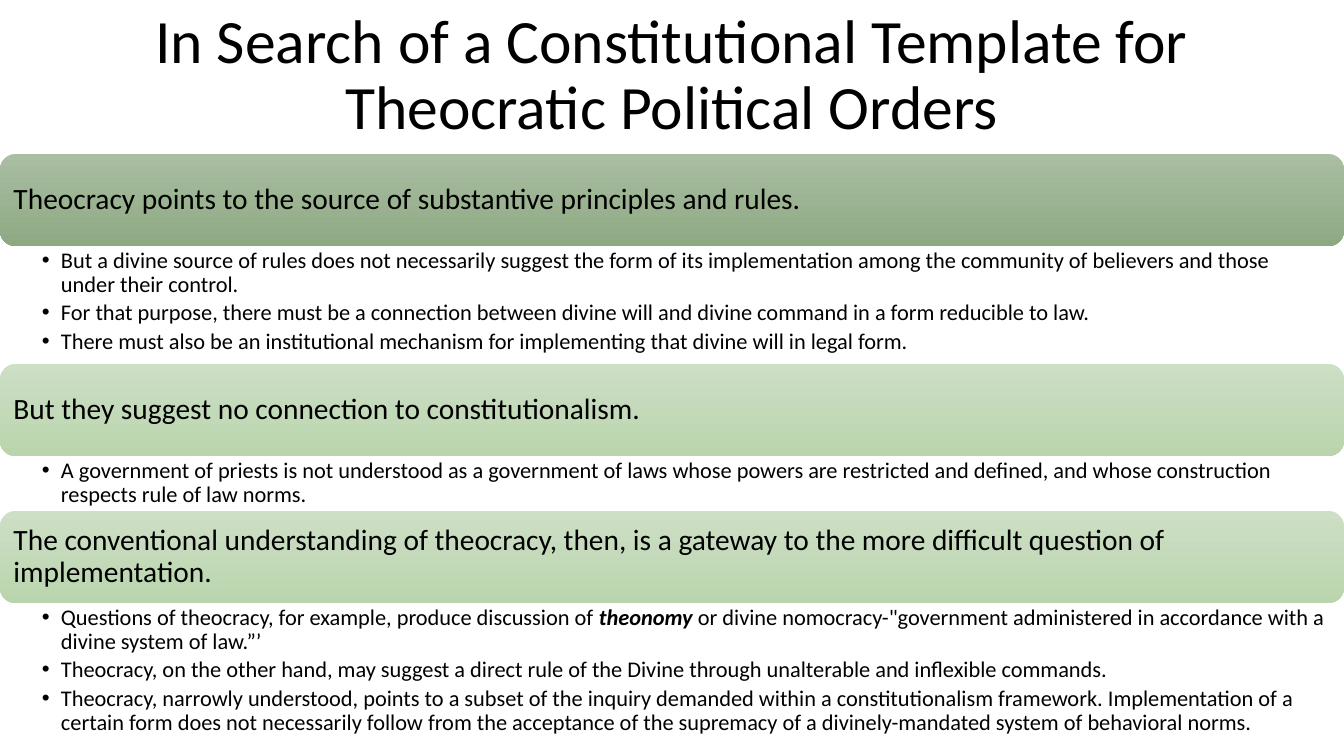
from lxml import etree
from pptx import Presentation
from pptx.dml.color import RGBColor
from pptx.enum.shapes import MSO_SHAPE
from pptx.enum.text import MSO_ANCHOR, MSO_AUTO_SIZE, PP_ALIGN
from pptx.oxml.ns import qn
from pptx.util import Pt

PX = 914400 / 100.8
WIDTH, HEIGHT = 1344, 756
FONT, INK = "Calibri", "000000"
ROUNDED = MSO_SHAPE.ROUNDED_RECTANGLE
TOP, MIDDLE = MSO_ANCHOR.TOP, MSO_ANCHOR.MIDDLE
LEFT, CENTER = PP_ALIGN.LEFT, PP_ALIGN.CENTER
NO_FIT = MSO_AUTO_SIZE.NONE
TITLE_ONLY = 5
BAR_TOP, BAR_HEIGHT = 154, 92
BULLET_INDENT = 19
DARK_GREEN = ("AABEA2", "8DA982")
PALE_GREEN = ("CDDFC5", "BAD5AE")

TITLE = "In Search of a Constitutional Template for Theocratic Political Orders"
# Each section: heading, bar gradient, height of the points, points as lists of runs.
# Every second run of a point is emphasised.
SECTIONS = [
    ("Theocracy points to the source of substantive principles and rules.", DARK_GREEN, 118, [
        ["But a divine source of rules does not necessarily suggest the form of its "
         "implementation among the community of believers and those under their control."],
        ["For that purpose, there must be a connection between divine will and divine "
         "command in a form reducible to law."],
        ["There must also be an institutional mechanism for implementing that divine "
         "will in legal form."],
    ]),
    ("But they suggest no connection to constitutionalism.", PALE_GREEN, 55, [
        ["A government of priests is not understood as a government of laws whose powers "
         "are restricted and defined, and whose construction respects rule of law norms."],
    ]),
    ("The conventional understanding of theocracy, then, is a gateway to the more "
     "difficult question of implementation.", PALE_GREEN, 141, [
        ["Questions of theocracy, for example, produce discussion of ", "theonomy",
         " or divine nomocracy-\"government administered in accordance with a divine "
         "system of law.”’"],
        ["Theocracy, on the other hand, may suggest a direct rule of the Divine through "
         "unalterable and inflexible commands."],
        ["Theocracy, narrowly understood, points to a subset of the inquiry demanded within "
         "a constitutionalism framework. Implementation of a certain form does not "
         "necessarily follow from the acceptance of the supremacy of a divinely-mandated "
         "system of behavioral norms."],
    ]),
]


def px(length):
    return round(length * PX)


def color(hex_code):
    return RGBColor.from_string(hex_code)


def set_all(target, values):
    for name, value in values.items():
        setattr(target, name, value)


def format_frame(frame, anchor, left, top, right, bottom):
    set_all(frame, {
        "word_wrap": True, "auto_size": NO_FIT, "vertical_anchor": anchor,
        "margin_left": px(left), "margin_top": px(top),
        "margin_right": px(right), "margin_bottom": px(bottom),
    })


def write(paragraph, runs, size, align=LEFT, space_after=0):
    set_all(paragraph, {"alignment": align, "line_spacing": 0.9,
                        "space_before": Pt(0), "space_after": Pt(space_after)})
    for index, text in enumerate(runs):
        run = paragraph.add_run()
        run.text = text
        emphasis = index % 2 == 1
        set_all(run.font, {"name": FONT, "size": Pt(size),
                           "bold": emphasis, "italic": emphasis})
        run.font.color.rgb = color(INK)


def add_bullet(paragraph):
    properties = paragraph._p.get_or_add_pPr()
    properties.set("marL", str(px(BULLET_INDENT)))
    properties.set("indent", str(-px(BULLET_INDENT)))
    etree.SubElement(properties, qn("a:buFont")).set("typeface", "Arial")
    etree.SubElement(properties, qn("a:buChar")).set("char", "•")


def place_title(slide, left, top, width, height):
    title = slide.shapes.title
    set_all(title, {"left": px(left), "top": px(top),
                    "width": px(width), "height": px(height)})
    format_frame(title.text_frame, MIDDLE, 9, 5, 9, 5)
    write(title.text_frame.paragraphs[0], [TITLE], 44, CENTER)


def add_heading_bar(slide, left, top, width, height, heading, gradient):
    bar = slide.shapes.add_shape(ROUNDED, px(left), px(top), px(width), px(height))
    bar.shadow.inherit = False
    bar.line.fill.background()
    bar.fill.gradient()
    bar.fill.gradient_angle = 270
    for stop, shade in zip(bar.fill.gradient_stops, gradient):
        stop.color.rgb = color(shade)
    format_frame(bar.text_frame, MIDDLE, 9, 9, 9, 9)
    write(bar.text_frame.paragraphs[0], [heading], 21)


def add_points(slide, left, top, width, height, points):
    box = slide.shapes.add_textbox(px(left), px(top), px(width), px(height))
    frame = box.text_frame
    format_frame(frame, TOP, 42, 3, 16, 3)
    for index, runs in enumerate(points):
        paragraph = frame.add_paragraph() if index else frame.paragraphs[0]
        add_bullet(paragraph)
        write(paragraph, runs, 16, space_after=3)


def main():
    deck = Presentation()
    deck.slide_width, deck.slide_height = px(WIDTH), px(HEIGHT)
    slide = deck.slides.add_slide(deck.slide_layouts[TITLE_ONLY])
    place_title(slide, 92, 0, 1160, 153)
    top = BAR_TOP
    for heading, gradient, points_height, points in SECTIONS:
        add_heading_bar(slide, 0, top, WIDTH, BAR_HEIGHT, heading, gradient)
        add_points(slide, 0, top + BAR_HEIGHT, WIDTH, points_height, points)
        top += BAR_HEIGHT + points_height
    deck.save("out.pptx")


if __name__ == "__main__":
    main()
